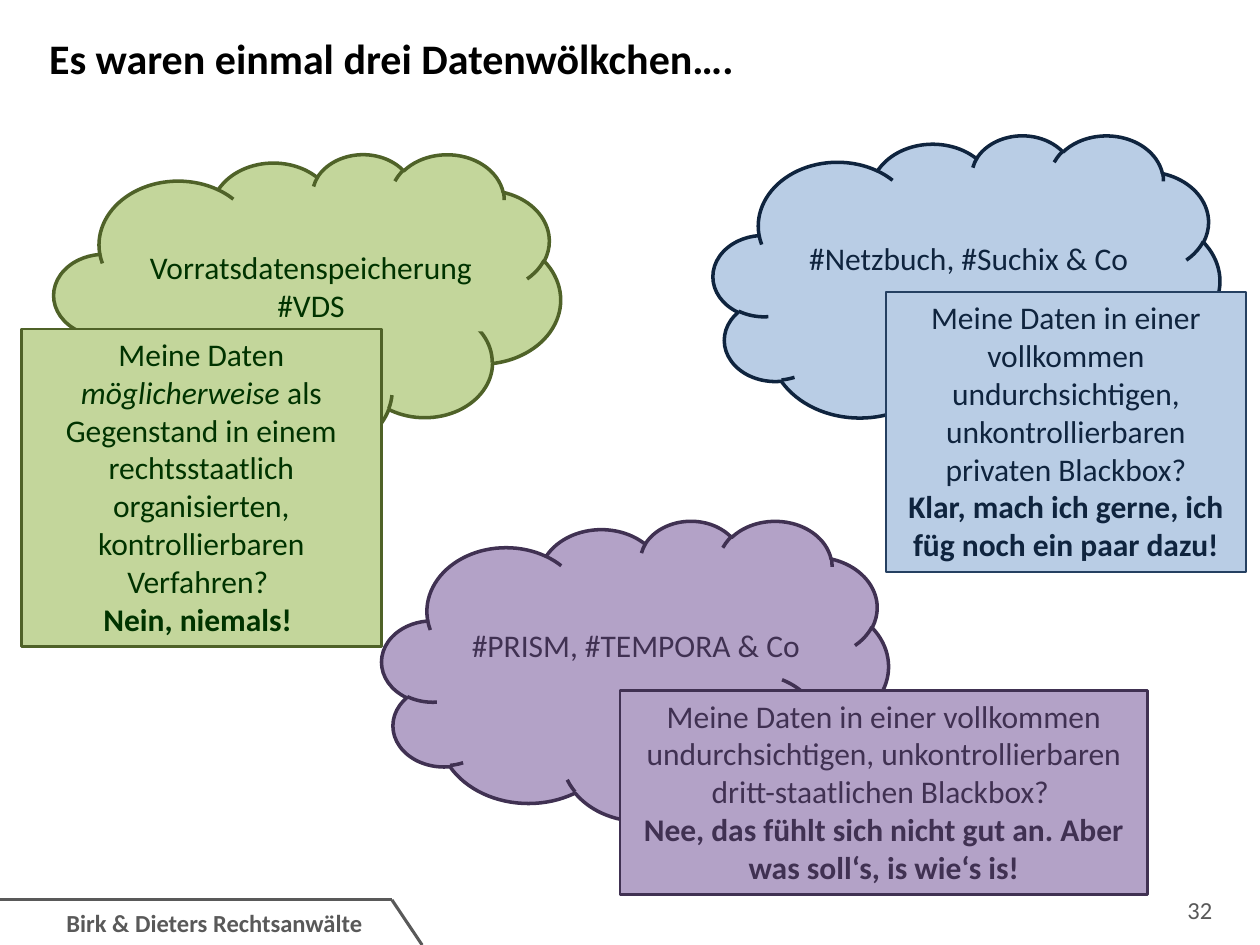
from dataclasses import dataclass

import pptx
import pptx.dml.color
import pptx.enum.shapes
import pptx.enum.text
import pptx.oxml
import pptx.oxml.ns
import pptx.util
from pptx.util import Cm

Align = pptx.enum.text.PP_ALIGN
Preset = pptx.enum.shapes.MSO_SHAPE
FONT = "Calibri"
GREY = "595959"
CLOUD_WIDTH, CLOUD_HEIGHT = 10.21, 6.05
LABEL_WIDTH = 7.26


@dataclass
class Box:
    """Position and size in centimetres."""
    left: float
    top: float
    width: float
    height: float

    def lengths(self) -> tuple:
        return Cm(self.left), Cm(self.top), Cm(self.width), Cm(self.height)


@dataclass
class DataCloud:
    """A cloud with its label and the comment box in front of it."""
    left: float
    top: float
    label_box: Box
    label: list[str]
    comment_box: Box
    question: str  # every second part between bars is italic
    answer: str
    fill: str
    line: str
    comment_line: str
    text: str
    label_filled: bool = True


def rgb(colour: str) -> pptx.dml.color.RGBColor:
    return pptx.dml.color.RGBColor.from_string(colour)


def style_runs(paragraph, size: float, colour: str, bold: bool = False) -> None:
    for run in paragraph.runs:
        run.font.name = FONT
        run.font.size = pptx.util.Pt(size)
        run.font.bold = bold
        run.font.color.rgb = rgb(colour)


def add_text(shapes, box: Box, lines: list[str], size: float, colour: str,
             align=Align.CENTER, bold: bool = False):
    shape = shapes.add_textbox(*box.lengths())
    shape.text_frame.word_wrap = True
    shape.text_frame.text = "\n".join(lines)
    for paragraph in shape.text_frame.paragraphs:
        paragraph.alignment = align
        style_runs(paragraph, size, colour, bold)
    return shape


def add_outlined(shapes, preset, box: Box, fill: str, line: str, width: float):
    shape = shapes.add_shape(preset, *box.lengths())
    shape.shadow.inherit = False
    shape.fill.solid()
    shape.fill.fore_color.rgb = rgb(fill)
    shape.line.color.rgb = rgb(line)
    shape.line.width = pptx.util.Pt(width)
    return shape


def add_line(shapes, start: tuple[float, float], end: tuple[float, float]) -> None:
    connector = shapes.add_connector(
        pptx.enum.shapes.MSO_CONNECTOR.STRAIGHT, *map(Cm, start + end))
    connector.line.color.rgb = rgb(GREY)
    connector.line.width = pptx.util.Pt(1.75)
    properties = connector._element.spPr
    properties.append(properties.makeelement(pptx.oxml.ns.qn("a:effectLst"), {}))


def add_cloud(shapes, cloud: DataCloud) -> None:
    group = shapes.add_group_shape()
    box = Box(cloud.left, cloud.top, CLOUD_WIDTH, CLOUD_HEIGHT)
    add_outlined(group.shapes, Preset.CLOUD, box, cloud.fill, cloud.line, 2)
    label = add_text(group.shapes, cloud.label_box, cloud.label, 18, cloud.text)
    if cloud.label_filled:
        label.fill.solid()
        label.fill.fore_color.rgb = rgb(cloud.fill)


def add_comment(shapes, cloud: DataCloud) -> None:
    shape = add_outlined(shapes, Preset.RECTANGLE, cloud.comment_box,
                         cloud.fill, cloud.comment_line, 1.5)
    frame = shape.text_frame
    frame.word_wrap = True
    frame.vertical_anchor = pptx.enum.text.MSO_ANCHOR.TOP
    parts = cloud.question.split("|")
    question, answer = frame.paragraphs[0], frame.add_paragraph()
    question.text, answer.text = parts[0], cloud.answer
    for part in parts[1:]:
        question.add_run().text = part
    for paragraph in (question, answer):
        paragraph.alignment = Align.CENTER
        style_runs(paragraph, 18, cloud.text, bold=paragraph is answer)
    for run in question.runs[1::2]:
        run.font.italic = True


CLOUDS = [
    DataCloud(
        1.09, 3.1, Box(2.64, 4.88, LABEL_WIDTH, 1.8),
        ["Vorratsdatenspeicherung", "#VDS"],
        Box(0.43, 6.63, LABEL_WIDTH, 6.4),
        "Meine Daten |möglicherweise |als Gegenstand in einem rechtsstaatlich "
        "organisierten, kontrollierbaren Verfahren? ",
        "Nein, niemals! ",
        "C3D69B", "4F6228", "4F6228", "003300"),
    DataCloud(
        7.7, 10.49, Box(9.19, 12.5, LABEL_WIDTH, 1.02),
        ["#PRISM, #TEMPORA & Co "],
        Box(12.5, 13.92, 10.64, 4.11),
        "Meine Daten in einer vollkommen undurchsichtigen, unkontrollierbaren "
        "dritt-staatlichen Blackbox? ",
        "Nee, das fühlt sich nicht gut an. Aber was soll‘s, is wie‘s is!",
        "B3A2C7", "403152", "403152", "403152"),
    DataCloud(
        14.38, 2.72, Box(15.9, 4.7, LABEL_WIDTH, 1.02),
        ["#Netzbuch, #Suchix & Co"],
        Box(17.86, 5.89, LABEL_WIDTH, 5.64),
        "Meine Daten in einer vollkommen undurchsichtigen, unkontrollierbaren "
        "privaten Blackbox?",
        "Klar, mach ich gerne, ich füg noch ein paar dazu!",
        "B9CDE5", "0F243E", "254061", "0F243E", label_filled=False),
]


def main() -> None:
    presentation = pptx.Presentation()
    presentation.slide_width, presentation.slide_height = Cm(25.4), Cm(19.05)
    slide = presentation.slides.add_slide(presentation.slide_layouts[6])
    shapes = slide.shapes

    # Footer with its tab outline, kept on one line
    add_line(shapes, (7.9, 18.14), (0, 18.14))
    add_line(shapes, (8.51, 19.05), (7.9, 18.14))
    footer = add_text(shapes, Box(1.09, 18.19, 7.01, 0.86),
                      ["Birk & Dieters Rechtsanwälte"], 14, GREY, Align.LEFT, bold=True)
    footer.text_frame.word_wrap = False
    footer.text_frame.auto_size = pptx.enum.text.MSO_AUTO_SIZE.SHAPE_TO_FIT_TEXT

    # Title and slide number
    add_text(shapes, Box(0.74, 0.53, 17.37, 2.21),
             ["Es waren einmal drei Datenwölkchen…."], 24, "000000", Align.LEFT, bold=True)
    add_text(shapes, Box(18.77, 17.91, 5.92, 1.02), ["32"], 14, GREY, Align.RIGHT)

    # Clouds behind, comments in front
    for cloud in CLOUDS:
        add_cloud(shapes, cloud)
    for cloud in CLOUDS:
        add_comment(shapes, cloud)

    presentation.save("out.pptx")


if __name__ == "__main__":
    main()
